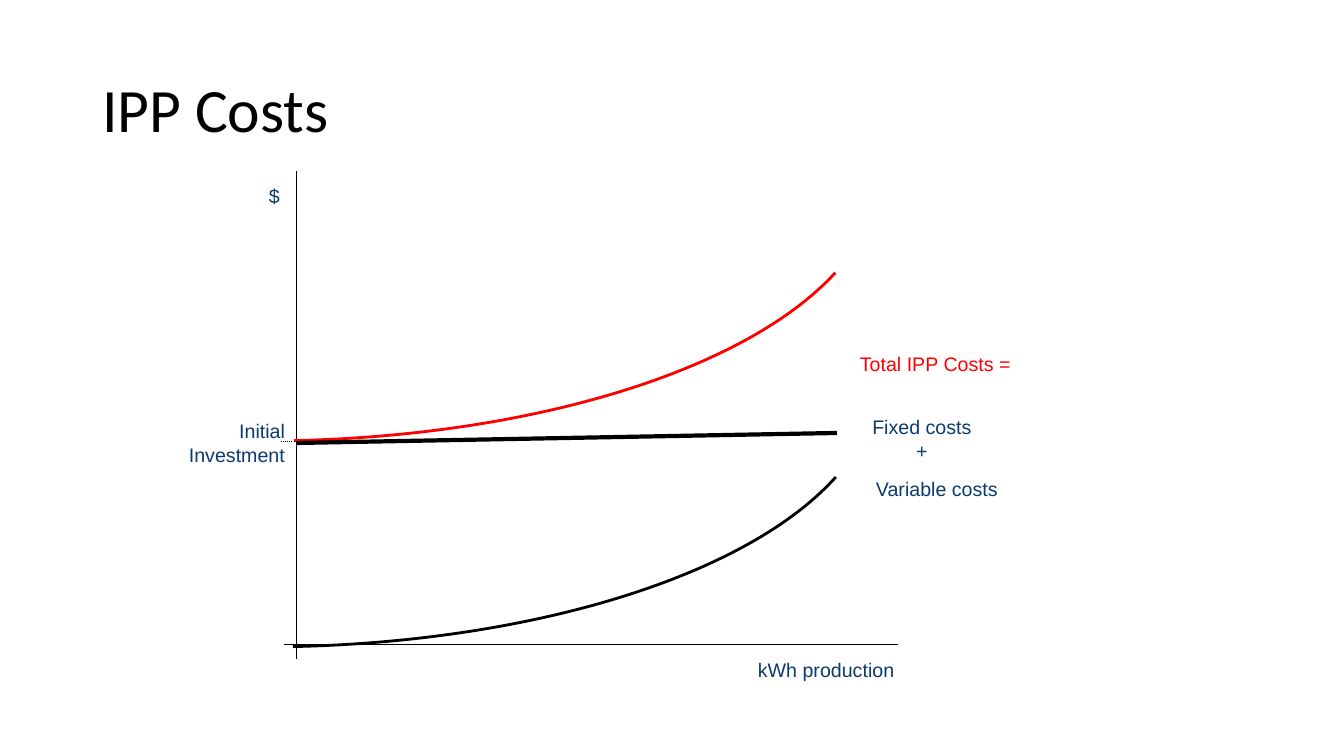
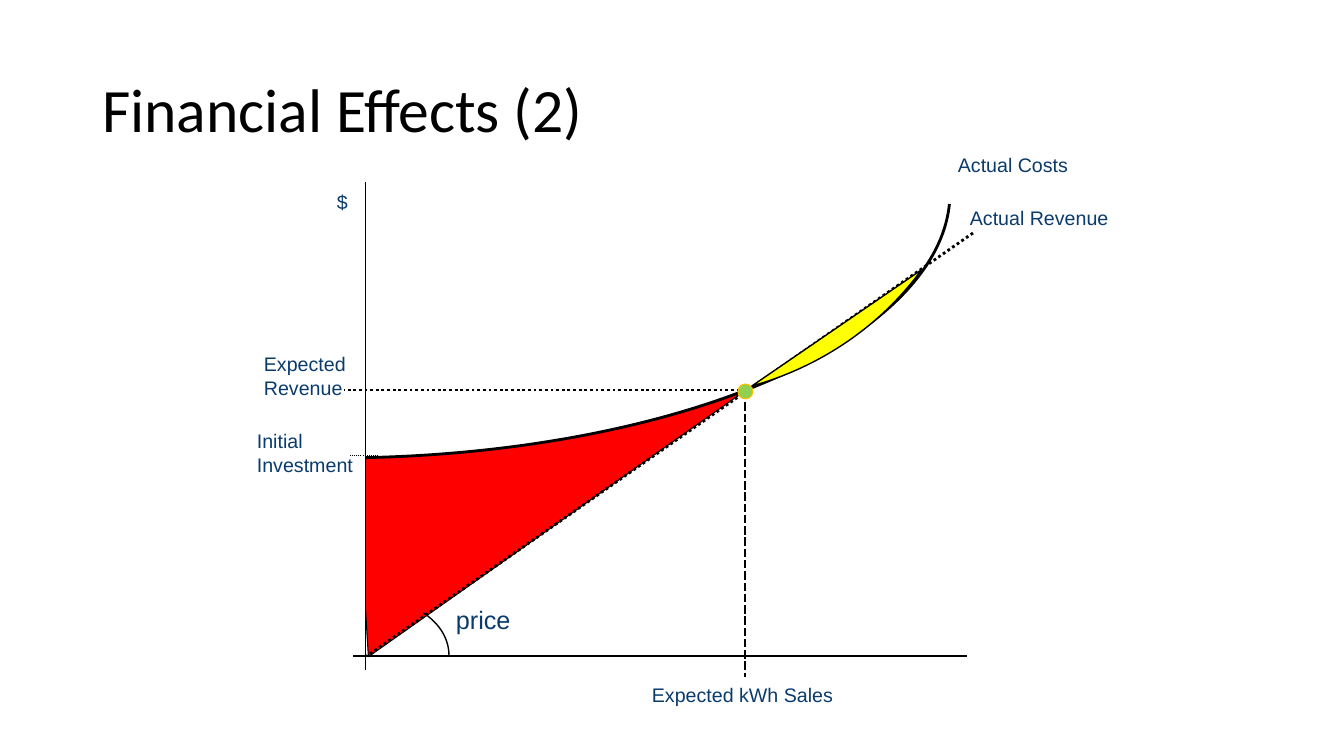
from pptx import Presentation
from pptx import util as u
from pptx.dml.color import RGBColor
from pptx.enum import dml, shapes, text
from pptx.oxml.ns import qn
from lxml import etree

PX = 914400 / 100.8
BLACK = RGBColor(0x00, 0x00, 0x00)
WHITE = RGBColor(0xFF, 0xFF, 0xFF)
RED = RGBColor(0xFF, 0x00, 0x00)
YELLOW = RGBColor(0xFF, 0xFF, 0x00)
GREEN = RGBColor(0x92, 0xD0, 0x50)
GOLD = RGBColor(0xFF, 0xC0, 0x00)
NAVY = RGBColor(0x0A, 0x3B, 0x6C)

DOT = dml.MSO_LINE.ROUND_DOT
DASH = dml.MSO_LINE.SQUARE_DOT
KIND = shapes.MSO_SHAPE
LEFT, CENTER, RIGHT = text.PP_ALIGN.LEFT, text.PP_ALIGN.CENTER, text.PP_ALIGN.RIGHT
TITLE_BOX = {"left": 92, "top": 40, "width": 1159, "height": 146}
TITLE_FONT = {"name": "Calibri", "size": u.Pt(44)}
TITLE_PARA = {"alignment": LEFT, "line_spacing": 0.9}
LABEL_FRAME = {"word_wrap": False, "auto_size": text.MSO_AUTO_SIZE.SHAPE_TO_FIT_TEXT}


def add_line(s, ends, width=0.75, dash=None):
    ln = s.shapes.add_connector(shapes.MSO_CONNECTOR.STRAIGHT, *[round(v * PX) for v in ends])
    ln.line.color.rgb = BLACK
    ln.line.width = u.Pt(width)
    if dash:
        ln.line.dash_style = dash
    etree.SubElement(ln._element.spPr, qn("a:effectLst"))


def add_shape(s, kind, box, fill=None, line=None, width=0.75, rotation=0, adj=()):
    sp = s.shapes.add_shape(kind, *[round(v * PX) for v in box])
    sp.shadow.inherit = False
    sp.rotation = rotation
    for i, v in enumerate(adj):
        sp.adjustments[i] = v
    if fill is None:
        sp.fill.background()
    else:
        sp.fill.solid()
        sp.fill.fore_color.rgb = fill
    if line is None:
        sp.line.fill.background()
    else:
        sp.line.color.rgb = line
        sp.line.width = u.Pt(width)


prs = Presentation()
prs.slide_width, prs.slide_height = round(1344 * PX), round(756 * PX)
layout = prs.slide_layouts[5]
for k, v in TITLE_BOX.items():
    setattr(layout.placeholders[0], k, round(v * PX))

slides = []
for title, dx, dy in [("IPP Costs", 0, 0), ("Financial Effects (2)", 69, 11)]:
    s = prs.slides.add_slide(layout)
    tf = s.shapes.title.text_frame
    tf.text = title
    tf.vertical_anchor = text.MSO_ANCHOR.MIDDLE
    p = tf.paragraphs[0]
    for k, v in TITLE_PARA.items():
        setattr(p, k, v)
    for k, v in TITLE_FONT.items():
        setattr(p.font, k, v)
    p.font.color.rgb = BLACK
    slides.append((s, dx, dy))

costs, effects = [s for s, dx, dy in slides]

add_shape(effects, KIND.ISOSCELES_TRIANGLE, (308, 215, 476, 385), RED, BLACK, rotation=86.5)
add_shape(effects, KIND.RECTANGLE, (224, 149, 142, 511), WHITE)
add_shape(effects, KIND.ARC, (70, -422, 531, 1229), WHITE, BLACK, 2, 90, (162.65, 212.08))

for s, dx, dy in slides:
    add_line(s, (297 + dx, 171 + dy, 297 + dx, 659 + dy))
    add_line(s, (898 + dx, 645 + dy, 284 + dx, 645 + dy))

add_shape(costs, KIND.ARC, (-2, -439, 531, 1229), None, RED, 2, 90, (167.79, 212.08))
add_shape(costs, KIND.ARC, (-3, -233, 531, 1229), None, BLACK, 2, 90, (167.68, 212.08))
add_line(costs, (309, 442, 281, 442), dash=DOT)
add_line(costs, (837, 433, 297, 443), 3)

add_line(effects, (745, 391, 745, 677), 2, DASH)
add_line(effects, (745, 390, 344, 390), 2, DOT)
add_line(effects, (378, 456, 350, 456), dash=DOT)
add_line(effects, (973, 233, 367, 656), 2, DOT)
add_shape(effects, KIND.OVAL, (738, 384, 15, 15), GREEN, GOLD)
add_shape(effects, KIND.CHORD, (394, -187, 563, 604), YELLOW, BLACK, 1, 255.8, (81.8, 107.07))
add_shape(effects, KIND.ARC, (306, 600, 143, 111), None, BLACK, 1, 0, (190.25, 0))

labels = [
    (costs, "$", (259, 179, 31, 34), LEFT, NAVY, 14),
    (costs, "Initial\nInvestment", (178, 414, 117, 57), RIGHT, NAVY, 14),
    (costs, "kWh production", (748, 653, 157, 34), LEFT, NAVY, 14),
    (costs, "Total IPP Costs =", (850, 347, 172, 34), LEFT, RED, 14),
    (costs, "Variable costs", (866, 472, 143, 34), LEFT, NAVY, 14),
    (costs, "Fixed costs\n+", (862, 410, 120, 57), CENTER, NAVY, 14),
    (effects, "$", (327, 185, 31, 34), LEFT, NAVY, 14),
    (effects, "Initial\nInvestment", (247, 424, 117, 57), LEFT, NAVY, 14),
    (effects, "Expected kWh Sales", (642, 678, 203, 34), LEFT, NAVY, 14),
    (effects, "Expected\nRevenue", (254, 347, 103, 57), LEFT, NAVY, 14),
    (effects, "Actual Costs", (948, 148, 137, 34), LEFT, NAVY, 14),
    (effects, "Actual Revenue", (960, 201, 160, 34), LEFT, NAVY, 14),
    (effects, "price", (446, 599, 76, 40), LEFT, NAVY, 18),
]
for s, words, box, align, color, size in labels:
    tf = s.shapes.add_textbox(*[round(v * PX) for v in box]).text_frame
    tf.text = words
    for k, v in LABEL_FRAME.items():
        setattr(tf, k, v)
    for p in tf.paragraphs:
        p.alignment = align
        for k, v in {"name": "Arial", "size": u.Pt(size)}.items():
            setattr(p.font, k, v)
        p.font.color.rgb = color

prs.save("out.pptx")
